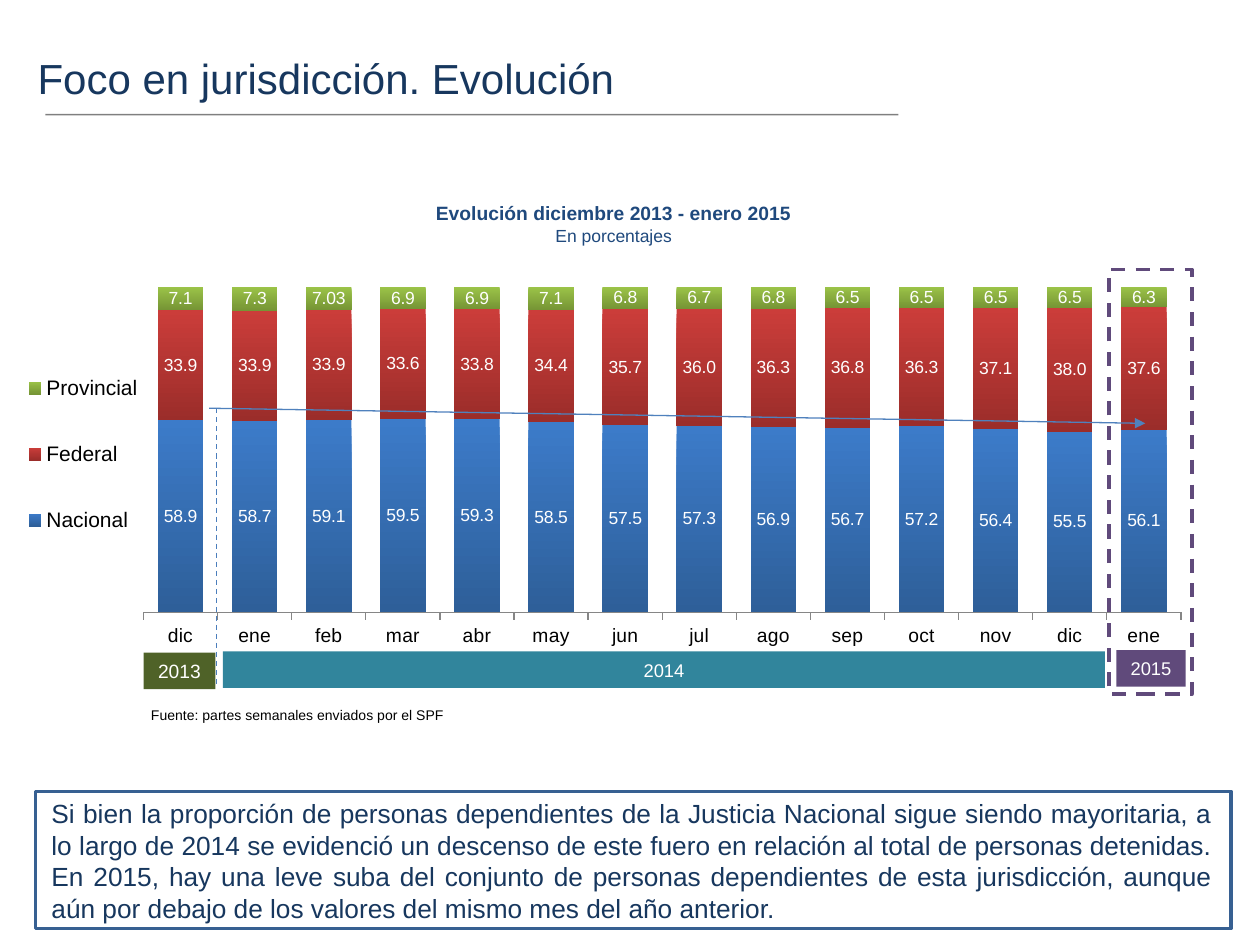
from dataclasses import dataclass

from lxml.etree import SubElement
from pptx import Presentation
from pptx.chart.data import CategoryChartData
from pptx.dml.color import RGBColor
from pptx.enum.chart import XL_CHART_TYPE as ChartType, XL_LABEL_POSITION as LabelPosition
from pptx.enum.chart import XL_LEGEND_POSITION as LegendPosition, XL_TICK_MARK as TickMark
from pptx.enum.dml import MSO_LINE as Dash
from pptx.enum.shapes import MSO_CONNECTOR as Connector, MSO_SHAPE as Shape
from pptx.enum.text import MSO_ANCHOR as Anchor, PP_ALIGN as Align
from pptx.oxml import parse_xml
from pptx.oxml.ns import nsdecls, qn
from pptx.util import Inches, Pt


@dataclass(frozen=True)
class Theme:
    font: str = "Arial"
    navy: str = "17375E"
    heading: str = "1F497D"
    black: str = "000000"
    white: str = "FFFFFF"
    frame: str = "376092"
    axis: str = "868686"
    trend: str = "4F81BD"
    divider: str = "4B7EBC"
    olive: str = "4F6228"
    teal: str = "31859C"
    purple: str = "604A7B"
    title_size: float = 24
    body_size: float = 15
    legend_size: float = 12
    chart_size: float = 11
    year_size: float = 10.5
    label_size: float = 10
    source_size: float = 8


theme = Theme()
rgb = RGBColor.from_string


def write_text(shape, *lines, size, color, align=Align.LEFT, anchor=Anchor.TOP, wrap=True):
    """Each line is plain text, or (text, size, bold)."""
    frame = shape.text_frame
    frame.word_wrap = wrap
    frame.vertical_anchor = anchor
    for index, line in enumerate(lines):
        text, line_size, bold = (line, size, False) if isinstance(line, str) else line
        paragraph = frame.add_paragraph() if index else frame.paragraphs[0]
        paragraph.alignment = align
        run = paragraph.add_run()
        run.text = text
        run.font.name = theme.font
        run.font.size = Pt(line_size)
        run.font.bold = bold
        run.font.color.rgb = rgb(color)


def add_line(x1, y1, x2, y2, color):
    line = slide.shapes.add_connector(
        Connector.STRAIGHT, Inches(x1), Inches(y1), Inches(x2), Inches(y2))
    line.line.color.rgb = rgb(color)
    line.line.width = Pt(0.75)
    SubElement(line._element.spPr, qn("a:effectLst"))
    return line


presentation = Presentation()
presentation.slide_width, presentation.slide_height = Inches(10), Inches(7.5)
slide = presentation.slides.add_slide(presentation.slide_layouts[6])

# Conclusion frame
conclusion_frame = slide.shapes.add_shape(
    Shape.RECTANGLE, Inches(0.28), Inches(6.28), Inches(9.49), Inches(1.09))
conclusion_frame.shadow.inherit = False
conclusion_frame.fill.solid()
conclusion_frame.fill.fore_color.rgb = rgb(theme.white)
conclusion_frame.line.color.rgb = rgb(theme.frame)
conclusion_frame.line.width = Pt(2)

# Title and its half-transparent rule
title = slide.shapes.add_textbox(Inches(0.2), Inches(0.37), Inches(7.4), Inches(0.62))
write_text(title, "Foco en jurisdicción. Evolución", size=theme.title_size, color=theme.navy)
title_rule = add_line(0.36, 0.91, 7.13, 0.91, theme.black)
rule_color = title_rule._element.spPr.find(".//" + qn("a:srgbClr"))
SubElement(rule_color, qn("a:alpha"), val="50000")

# Conclusion text
conclusion = slide.shapes.add_textbox(Inches(0.31), Inches(6.28), Inches(9.41), Inches(1.11))
write_text(
    conclusion,
    "Si bien la proporción de personas dependientes de la Justicia Nacional sigue siendo "
    "mayoritaria, a lo largo de 2014 se evidenció un descenso de este fuero en relación al "
    "total de personas detenidas. En 2015, hay una leve suba del conjunto de personas "
    "dependientes de esta jurisdicción, aunque aún por debajo de los valores del mismo mes "
    "del año anterior.",
    size=theme.body_size, color=theme.navy, align=Align.JUSTIFY)

# Chart data: name, values, label format, top and bottom colour
months = "dic ene feb mar abr may jun jul ago sep oct nov dic ene".split()
jurisdictions = [
    ("Nacional", [58.9, 58.7, 59.1, 59.5, 59.3, 58.5, 57.5, 57.3, 56.9, 56.7, 57.2, 56.4,
                  55.5, 56.1], "0.0", "3C7BC9", "2E5F99"),
    ("Federal", [33.9, 33.9, 33.9, 33.6, 33.8, 34.4, 35.7, 36, 36.3, 36.8, 36.3, 37.1,
                 38, 37.6], "0.0", "CB3D3A", "9B2D2A"),
    ("Provincial", [7.1, 7.3, 7.03, 6.9, 6.9, 7.1, 6.8, 6.7, 6.8, 6.5, 6.5, 6.5,
                    6.5, 6.3], "General", "9BC348", "769535"),
]
chart_data = CategoryChartData()
chart_data.categories = months
for name, values, *_ in jurisdictions:
    chart_data.add_series(name, values)

# Stacked chart
chart = slide.shapes.add_chart(
    ChartType.COLUMN_STACKED_100, Inches(0.2), Inches(2.17), Inches(9.21), Inches(3.15),
    chart_data).chart
chart.has_title = False
chart.font.name = theme.font
chart.font.size = Pt(theme.chart_size)
chart.font.color.rgb = rgb(theme.black)
chart.value_axis.visible = False
chart.value_axis.has_major_gridlines = False
chart.category_axis.major_tick_mark = TickMark.OUTSIDE
chart.category_axis.format.line.color.rgb = rgb(theme.axis)
chart.category_axis.tick_labels.font.size = Pt(theme.chart_size)
plot = chart.plots[0]
plot.gap_width, plot.overlap, plot.vary_by_categories = 63, 100, False

for series, (_, _, number_format, top, bottom) in zip(plot.series, jurisdictions):
    fill = series.format.fill
    fill.gradient()
    fill.gradient_angle = 270
    for stop, color in zip(fill.gradient_stops, (top, bottom)):
        stop.color.rgb = rgb(color)
    labels = series.data_labels
    labels.show_value = True
    labels.position = LabelPosition.CENTER
    labels.number_format = number_format
    labels.number_format_is_linked = False
    labels.font.name = theme.font
    labels.font.size = Pt(theme.label_size)
    labels.font.color.rgb = rgb(theme.white)

# Legend, placed by hand at the left of the plot
chart.has_legend = True
legend = chart.legend
legend.position = LegendPosition.RIGHT
legend.include_in_layout = False
legend.font.name = theme.font
legend.font.size = Pt(theme.legend_size)


def layout_xml(x, y, width, height, target=""):
    return parse_xml(
        f'<c:layout {nsdecls("c")}><c:manualLayout>{target}'
        '<c:xMode val="edge"/><c:yMode val="edge"/>'
        f'<c:x val="{x}"/><c:y val="{y}"/><c:w val="{width}"/><c:h val="{height}"/>'
        '</c:manualLayout></c:layout>')


plot_area = chart._chartSpace.chart.plotArea
for old_layout in plot_area.findall(qn("c:layout")):
    plot_area.remove(old_layout)
plot_area.insert(0, layout_xml(0.102, 0.034, 0.894, 0.82, '<c:layoutTarget val="inner"/>'))
for old_layout in legend._element.findall(qn("c:layout")):
    legend._element.remove(old_layout)
legend._element.find(qn("c:legendPos")).addnext(layout_xml(0, 0.15, 0.1, 0.61))

# Chart heading and source
heading = slide.shapes.add_textbox(Inches(3.07), Inches(1.55), Inches(3.6), Inches(0.45))
write_text(heading, ("Evolución diciembre 2013 - enero 2015", theme.chart_size, True),
           "En porcentajes", size=theme.label_size, color=theme.heading, align=Align.CENTER)
source = slide.shapes.add_textbox(Inches(1.1), Inches(5.56), Inches(2.56), Inches(0.24))
write_text(source, "Fuente: partes semanales enviados por el SPF",
           size=theme.source_size, color=theme.black, wrap=False)

# Trend arrow and year divider
trend = add_line(1.66, 3.24, 9.09, 3.36, theme.trend)
SubElement(trend.line._get_or_add_ln(), qn("a:tailEnd"), type="triangle")
divider = add_line(1.72, 3.24, 1.72, 5.44, theme.divider)
divider.line.dash_style = Dash.DASH

# Year bands
for year, left, top, width, color, size in [
    ("2013", 1.14, 5.18, 0.57, theme.olive, theme.chart_size),
    ("2014", 1.77, 5.17, 7, theme.teal, theme.year_size),
    ("2015", 8.86, 5.16, 0.55, theme.purple, theme.year_size),
]:
    band = slide.shapes.add_shape(
        Shape.RECTANGLE, Inches(left), Inches(top), Inches(width), Inches(0.29))
    band.shadow.inherit = False
    band.fill.solid()
    band.fill.fore_color.rgb = rgb(color)
    band.line.fill.background()
    write_text(band, year, size=size, color=theme.white, align=Align.CENTER,
               anchor=Anchor.MIDDLE, wrap=year != "2015")

# Dashed highlight around the latest month
highlight = slide.shapes.add_shape(
    Shape.RECTANGLE, Inches(8.8), Inches(2.14), Inches(0.66), Inches(3.37))
highlight.shadow.inherit = False
highlight.fill.background()
highlight.line.color.rgb = rgb(theme.purple)
highlight.line.width = Pt(2)
highlight.line.dash_style = Dash.DASH

presentation.save("out.pptx")
